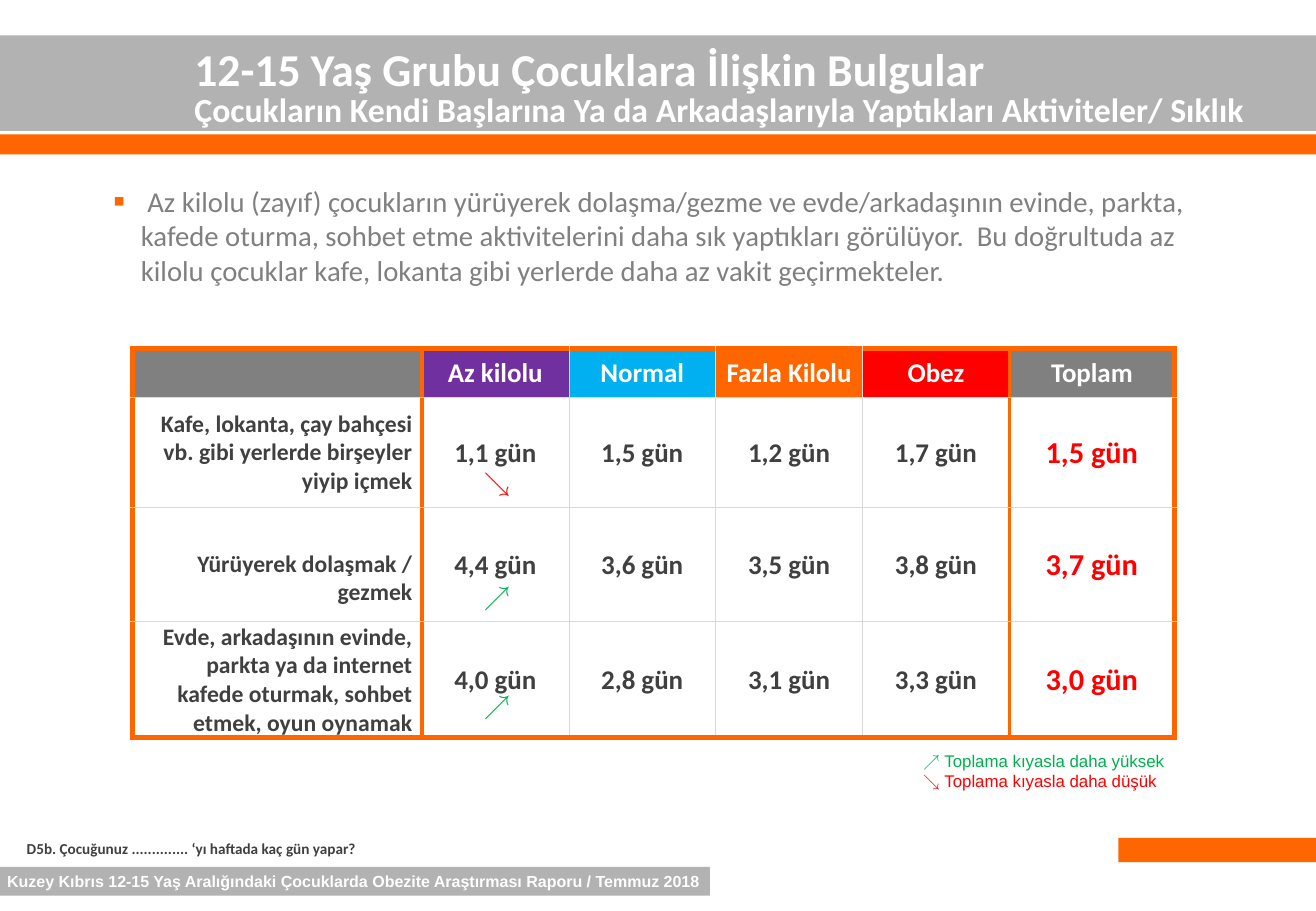
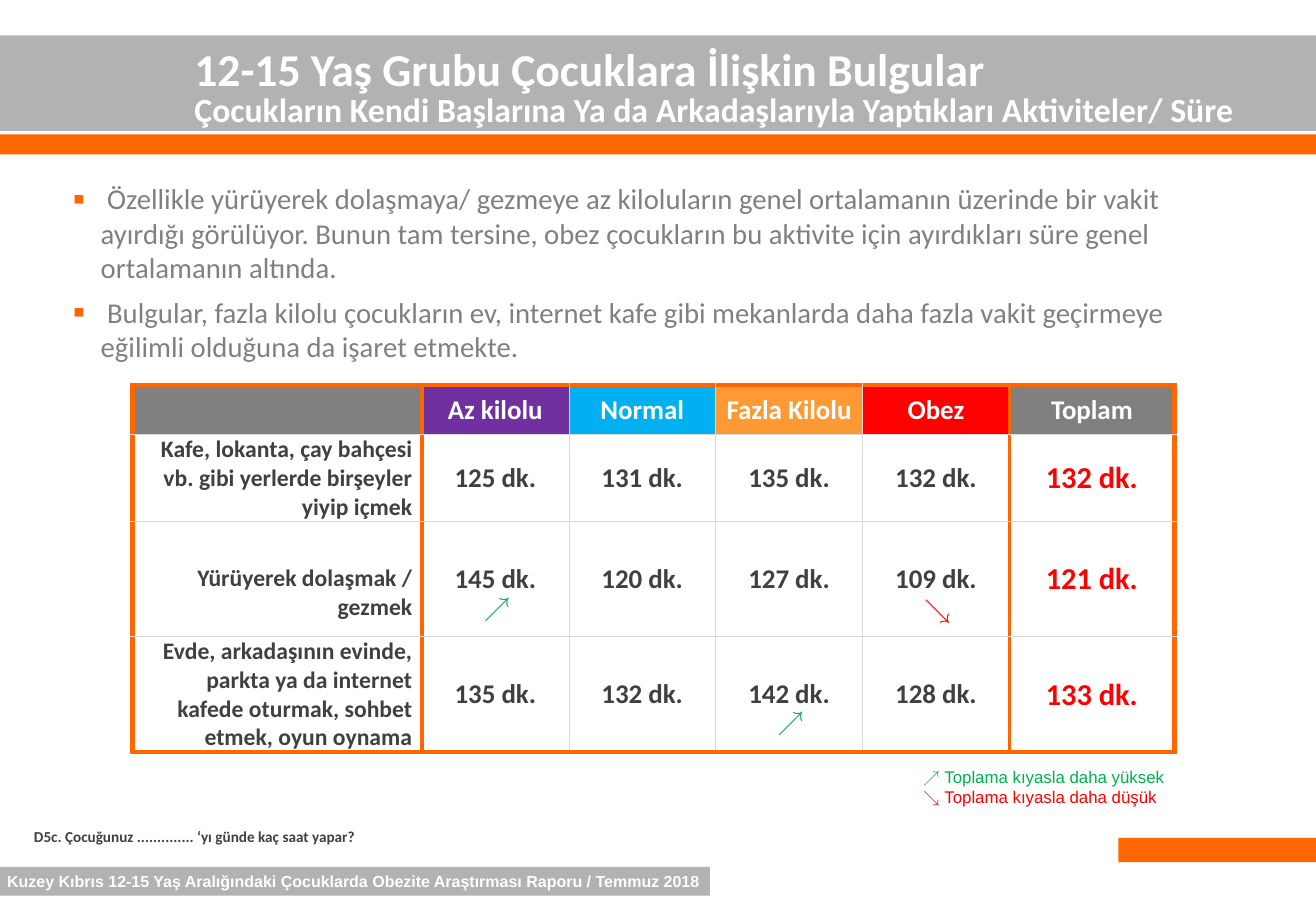
from lxml import etree
from pptx import Presentation
from pptx.dml.color import RGBColor
from pptx.enum import shapes, text
from pptx.oxml import ns
from pptx.util import Cm, Pt

ORANGE = RGBColor(0xFF, 0x66, 0x00)
LIGHT_ORANGE = RGBColor(0xFF, 0x99, 0x33)
BAND_GREY = RGBColor(0xB2, 0xB2, 0xB2)
GREY = RGBColor(0x80, 0x80, 0x80)
DARK = RGBColor(0x40, 0x40, 0x40)
RULE = RGBColor(0xD9, 0xD9, 0xD9)
WHITE = RGBColor(0xFF, 0xFF, 0xFF)
PURPLE = RGBColor(0x70, 0x30, 0xA0)
BLUE = RGBColor(0x00, 0xB0, 0xF0)
RED = RGBColor(0xFF, 0x00, 0x00)
GREEN = RGBColor(0x00, 0xB0, 0x50)

UP, DOWN = "↗", "↘"
ARROW_COLORS = {UP: GREEN, DOWN: RED}
LEFT, CENTER, RIGHT = text.PP_ALIGN.LEFT, text.PP_ALIGN.CENTER, text.PP_ALIGN.RIGHT
FOOTER = "Kuzey Kıbrıs 12-15 Yaş Aralığındaki Çocuklarda Obezite Araştırması Raporu / Temmuz 2018"
TITLE = "12-15 Yaş Grubu Çocuklara İlişkin Bulgular"
SUBTITLE = "Çocukların Kendi Başlarına Ya da Arkadaşlarıyla Yaptıkları Aktiviteler/ "
HEADERS = ["", "Az kilolu", "Normal", "Fazla Kilolu", "Obez", "Toplam"]
COL_WIDTHS = [6.05, 3.07, 3.07, 3.07, 3.07, 3.45]
CAFE = "Kafe, lokanta, çay bahçesi vb. gibi yerlerde birşeyler yiyip içmek"
WALK = "Yürüyerek dolaşmak / gezmek"
HOME = "Evde, arkadaşının evinde, parkta ya da internet kafede oturmak, sohbet etmek, oyun "

PAGES = [
    dict(
        topic="Sıklık",
        body=(2.11, 3.71, 23.44, 2.67),
        bullets=[
            " Az kilolu (zayıf) çocukların yürüyerek dolaşma/gezme ve evde/arkadaşının evinde, "
            "parkta, kafede oturma, sohbet etme aktivitelerini daha sık yaptıkları görülüyor.  "
            "Bu doğrultuda az kilolu çocuklar kafe, lokanta gibi yerlerde daha az vakit geçirmekteler.",
        ],
        table_top=7.29,
        heights=[1.02, 2.29, 2.39, 2.39],
        overweight=ORANGE,
        rows=[
            [CAFE, "1,1 gün", "1,5 gün", "1,2 gün", "1,7 gün", "1,5 gün"],
            [WALK, "4,4 gün", "3,6 gün", "3,5 gün", "3,8 gün", "3,7 gün"],
            [HOME + "oynamak", "4,0 gün", "2,8 gün", "3,1 gün", "3,3 gün", "3,0 gün"],
        ],
        arrows=[(1, 9.73, DOWN), (1, 12.12, UP), (1, 14.4, UP)],
        legend_top=15.7,
        question=(0.56, 17.55, "D5b. Çocuğunuz .............. ‘yı haftada kaç gün yapar?"),
    ),
    dict(
        topic="Süre",
        body=(1.27, 3.66, 24.41, 4.06),
        bullets=[
            " Özellikle yürüyerek dolaşmaya/ gezmeye az kiloluların genel ortalamanın üzerinde "
            "bir vakit ayırdığı görülüyor. Bunun tam tersine, obez çocukların bu aktivite için "
            "ayırdıkları süre genel ortalamanın altında.",
            " Bulgular, fazla kilolu çocukların ev, internet kafe gibi mekanlarda daha fazla "
            "vakit geçirmeye eğilimli olduğuna da işaret etmekte.",
        ],
        table_top=8.05,
        heights=[1.02, 1.8, 2.39, 2.39],
        overweight=LIGHT_ORANGE,
        rows=[
            [CAFE, "125 dk.", "131 dk.", "135 dk.", "132 dk.", "132 dk."],
            [WALK, "145 dk.", "120 dk.", "127 dk.", "109 dk.", "121 dk."],
            [HOME + "oynama", "135 dk.", "132 dk.", "142 dk.", "128 dk.", "133 dk."],
        ],
        arrows=[(1, 12.35, UP), (4, 12.4, DOWN), (3, 14.73, UP)],
        legend_top=16.03,
        question=(0.71, 17.3, "D5c. Çocuğunuz .............. ‘yı günde kaç saat yapar?"),
    ),
]


def write(tf, content, size=16, color=DARK, font="Calibri", bold=False, align=LEFT,
          spacing=None, before=0, bullet=None):
    p = tf.paragraphs[0]
    if p.runs:
        p = tf.add_paragraph()
        p.space_before = Pt(before)
    else:
        p.space_before = Pt(0)
    if bullet:
        pPr = p._p.get_or_add_pPr()
        pPr.set("marL", str(Cm(0.58)))
        pPr.set("indent", str(-Cm(0.58)))
        clr = etree.SubElement(pPr, ns.qn("a:buClr"))
        etree.SubElement(clr, ns.qn("a:srgbClr"), val=str(ORANGE))
        etree.SubElement(pPr, ns.qn("a:buSzPct"), val="120000")
        etree.SubElement(pPr, ns.qn("a:buFont"), typeface="Arial")
        etree.SubElement(pPr, ns.qn("a:buChar"), char=bullet)
    p.alignment = align
    if spacing:
        p.line_spacing = Pt(spacing)
    r = p.add_run()
    r.text = content
    r.font.size, r.font.name, r.font.bold = Pt(size), font, bold
    r.font.color.rgb = color


def add_text_frame(s, left, top, width, height):
    tf = s.shapes.add_textbox(Cm(left), Cm(top), Cm(width), Cm(height)).text_frame
    tf.margin_left = tf.margin_right = tf.margin_top = tf.margin_bottom = 0
    tf.word_wrap = True
    return tf


prs = Presentation()
prs.slide_width, prs.slide_height = Cm(27.51), Cm(19.05)
layout = prs.slide_layouts[1]
title = layout.placeholders[0]
title.left, title.top, title.width, title.height = Cm(3.81), Cm(1.17), Cm(23.2), Cm(1.68)
title.text_frame.vertical_anchor = text.MSO_ANCHOR.TOP

slides = [prs.slides.add_slide(layout) for page in PAGES]

bands = [
    (0, 0.74, 27.51, 2, BAND_GREY),
    (0, 2.81, 27.51, 0.42, ORANGE),
    (23.38, 17.52, 4.13, 0.51, ORANGE),
    (0, 18.13, 14.84, 0.6, BAND_GREY),
]
for i, (left, top, width, height, color) in enumerate(bands):
    band = slides[0].shapes.add_shape(
        shapes.MSO_SHAPE.RECTANGLE, Cm(left), Cm(top), Cm(width), Cm(height))
    band.shadow.inherit = False
    band.fill.solid()
    band.fill.fore_color.rgb = color
    band.line.fill.background()
    band.name = f"Band {i + 1}"
    band.element.xpath("./p:nvSpPr/p:cNvPr")[0].set("id", str(20 + i))
    layout.shapes.element.insert(2 + i, band.element)

tf = band.text_frame
tf.margin_left, tf.margin_right, tf.margin_top, tf.margin_bottom = Cm(0.15), 0, 0, 0
tf.vertical_anchor = text.MSO_ANCHOR.MIDDLE
write(tf, FOOTER, size=9.5, color=WHITE, font="Arial", bold=True)

for s, page in zip(slides, PAGES):
    tf = s.shapes.title.text_frame
    tf.auto_size = text.MSO_AUTO_SIZE.NONE
    write(tf, TITLE, size=27, color=WHITE, bold=True, spacing=20)
    write(tf, SUBTITLE + page["topic"], size=20, color=WHITE, bold=True, spacing=20)

    body = s.placeholders[1]
    body.left, body.top, body.width, body.height = [Cm(v) for v in page["body"]]
    body.text_frame.auto_size = text.MSO_AUTO_SIZE.NONE
    for item in page["bullets"]:
        write(body.text_frame, item, size=17, color=GREY, before=6, bullet="▪")

    rows = [HEADERS] + page["rows"]
    fills = [GREY, PURPLE, BLUE, page["overweight"], RED, GREY]
    last_row, last_col = len(rows) - 1, len(HEADERS) - 1
    table = s.shapes.add_table(
        len(rows), len(HEADERS), Cm(2.77), Cm(page["table_top"]),
        Cm(sum(COL_WIDTHS)), Cm(sum(page["heights"]))).table
    table.first_row = table.horz_banding = False
    for column, width in zip(table.columns, COL_WIDTHS):
        column.width = Cm(width)
    for row, height in zip(table.rows, page["heights"]):
        row.height = Cm(height)

    for i, row in enumerate(rows):
        for j, value in enumerate(row):
            cell = table.cell(i, j)
            tcPr = cell._tc.get_or_add_tcPr()
            borders = {
                "L": 3 if j == 0 else 2.25 if j in (1, last_col) else 0.25,
                "R": 3 if j == last_col else 2.25 if j in (0, last_col - 1) else 0.25,
                "T": 3 if i == 0 else 0.25,
                "B": 3 if i == last_row else 0.25,
            }
            for side, weight in borders.items():
                ln = etree.SubElement(tcPr, ns.qn("a:ln" + side), w=str(Pt(weight)))
                fill = etree.SubElement(ln, ns.qn("a:solidFill"))
                color = ORANGE if weight > 1 else RULE
                etree.SubElement(fill, ns.qn("a:srgbClr"), val=str(color))
            if i == 0:
                cell.fill.solid()
                cell.fill.fore_color.rgb = fills[j]
            else:
                cell.fill.background()

            cell.vertical_anchor = text.MSO_ANCHOR.MIDDLE
            cell.margin_left = cell.margin_right = cell.margin_top = Cm(0.03)
            cell.margin_bottom = 0
            if i == 0:
                style = dict(color=WHITE, align=CENTER)
            elif j == 0:
                style = dict(size=14, align=RIGHT)
                cell.margin_left, cell.margin_right = Cm(0.1), Cm(0.2)
                if value == WALK:
                    cell.margin_top = Cm(0.6)
            elif j == last_col:
                style = dict(size=18, color=RED, align=CENTER)
            else:
                style = dict(align=CENTER)
            if value:
                write(cell.text_frame, value, bold=True, **style)

    for col, top, arrow in page["arrows"]:
        left = 10.11 + (col - 1) * COL_WIDTHS[1]
        tf = add_text_frame(s, left, top, 0.9, 0.7)
        write(tf, arrow, color=ARROW_COLORS[arrow], font="Arial")

    tf = add_text_frame(s, 19.3, page["legend_top"], 5.6, 0.9)
    for arrow, level in ((UP, "yüksek"), (DOWN, "düşük")):
        write(tf, f"{arrow} Toplama kıyasla daha {level}", size=10,
              color=ARROW_COLORS[arrow], font="Arial")

    left, top, question = page["question"]
    write(add_text_frame(s, left, top, 18.3, 0.4), question, size=9, bold=True)

prs.save("out.pptx")
